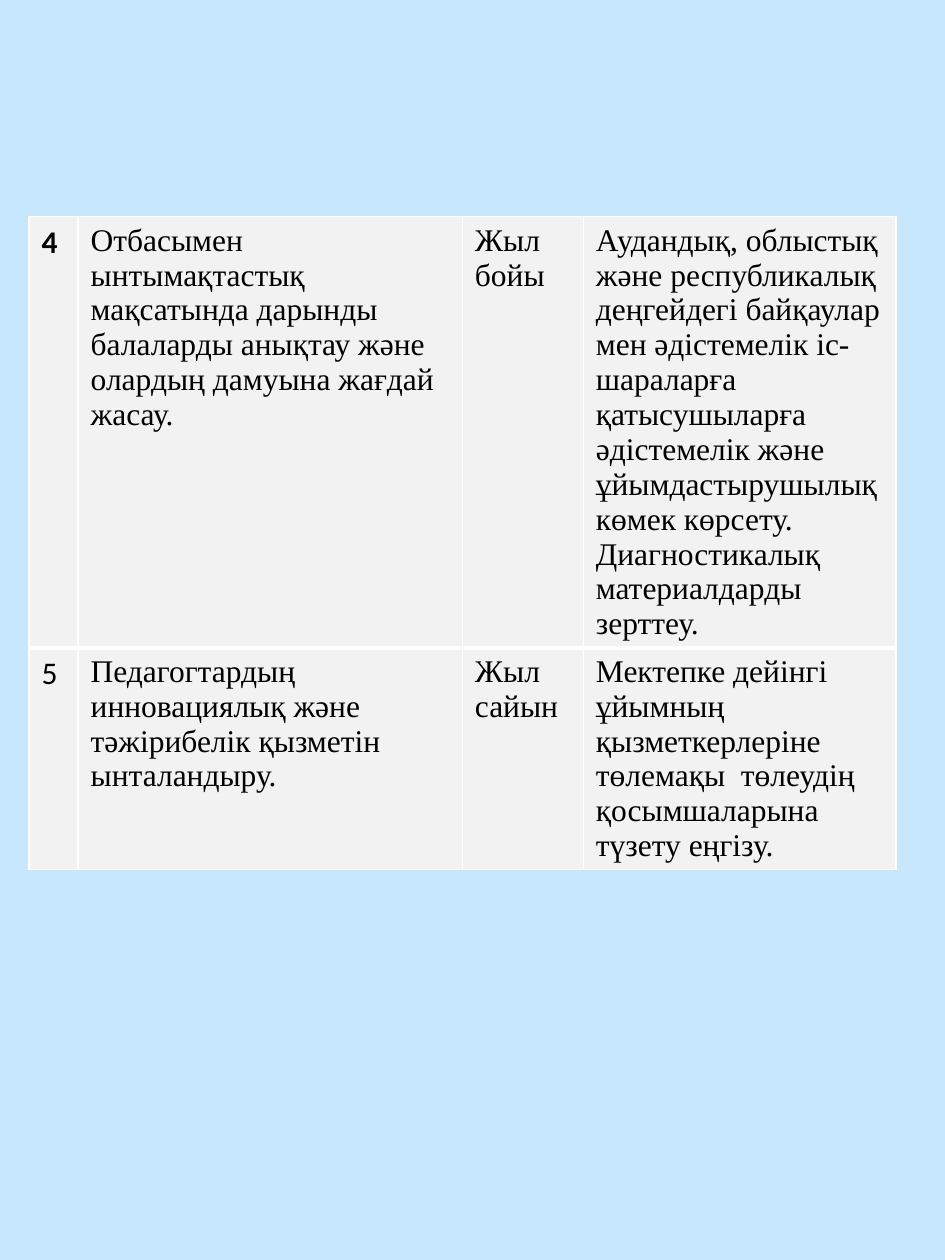
from lxml.etree import SubElement
from pptx import Presentation
from pptx.dml.color import RGBColor
from pptx.oxml.ns import qn
from pptx.util import Inches, Pt

COLORS = {"sky": "C6E7FC", "cell": "F2F2F2", "text": "000000", "rule": "FFFFFF"}
NUMBER_FONT, BODY_FONT = "Calibri", "Times New Roman"
TEXT_SIZE = 18
SLIDE_WIDTH, SLIDE_HEIGHT = 7.5, 10
PLAN_LEFT, PLAN_TOP, PLAN_HEIGHT = 0.23, 1.72, 5.6
COLUMN_WIDTHS = [0.39, 3.05, 0.96, 2.48]
ROW_HEIGHT = 0.41
THIN, THICK = 1, 3
BOLD_NUMBER = "4"

PLAN = [
    [
        [BOLD_NUMBER],
        [
            "Отбасымен ынтымақтастық мақсатында дарынды",
            "балаларды анықтау және олардың дамуына жағдай жасау.",
        ],
        ["Жыл бойы"],
        [
            "Аудандық, облыстық және республикалық деңгейдегі байқаулар мен "
            "әдістемелік іс-шараларға қатысушыларға әдістемелік және "
            "ұйымдастырушылық көмек көрсету. Диагностикалық материалдарды зерттеу."
        ],
    ],
    [
        ["5"],
        [
            "Педагогтардың инновациялық және тәжірибелік қызметін",
            "ынталандыру.",
        ],
        ["Жыл сайын"],
        [
            "Мектепке дейінгі ұйымның қызметкерлеріне төлемақы  төлеудің "
            "қосымшаларына түзету еңгізу."
        ],
    ],
]


def color(name):
    return RGBColor.from_string(COLORS[name])


def add_borders(cell, top, bottom):
    properties = cell._tc.get_or_add_tcPr()
    for side, width in (("L", THIN), ("R", THIN), ("T", top), ("B", bottom)):
        border = SubElement(properties, qn(f"a:ln{side}"), w=str(Pt(width)))
        fill = SubElement(border, qn("a:solidFill"))
        SubElement(fill, qn("a:srgbClr"), val=COLORS["rule"])


def write_cell(cell, paragraphs, font_name):
    frame = cell.text_frame
    for index, words in enumerate(paragraphs):
        paragraph = frame.add_paragraph() if index else frame.paragraphs[0]
        run = paragraph.add_run()
        run.text = words
        run.font.name = font_name
        run.font.size = Pt(TEXT_SIZE)
        run.font.bold = words == BOLD_NUMBER
        run.font.color.rgb = color("text")


def main():
    deck = Presentation()
    deck.slide_width, deck.slide_height = Inches(SLIDE_WIDTH), Inches(SLIDE_HEIGHT)
    slide = deck.slides.add_slide(deck.slide_layouts[6])
    slide.background.fill.solid()
    slide.background.fill.fore_color.rgb = color("sky")

    plan_frame = slide.shapes.add_table(
        len(PLAN), len(COLUMN_WIDTHS), Inches(PLAN_LEFT), Inches(PLAN_TOP),
        Inches(sum(COLUMN_WIDTHS)), Inches(PLAN_HEIGHT),
    )
    plan = plan_frame.table
    plan.first_row = plan.horz_banding = False
    for column, width in zip(plan.columns, COLUMN_WIDTHS):
        column.width = Inches(width)
    for row_index, tasks in enumerate(PLAN):
        plan.rows[row_index].height = Inches(ROW_HEIGHT)
        top = THICK if row_index else THIN
        bottom = THIN if row_index else THICK
        for column_index, paragraphs in enumerate(tasks):
            cell = plan.cell(row_index, column_index)
            add_borders(cell, top, bottom)
            cell.fill.solid()
            cell.fill.fore_color.rgb = color("cell")
            write_cell(cell, paragraphs, BODY_FONT if column_index else NUMBER_FONT)
    plan_frame.height = Inches(PLAN_HEIGHT)

    deck.save("out.pptx")


if __name__ == "__main__":
    main()
